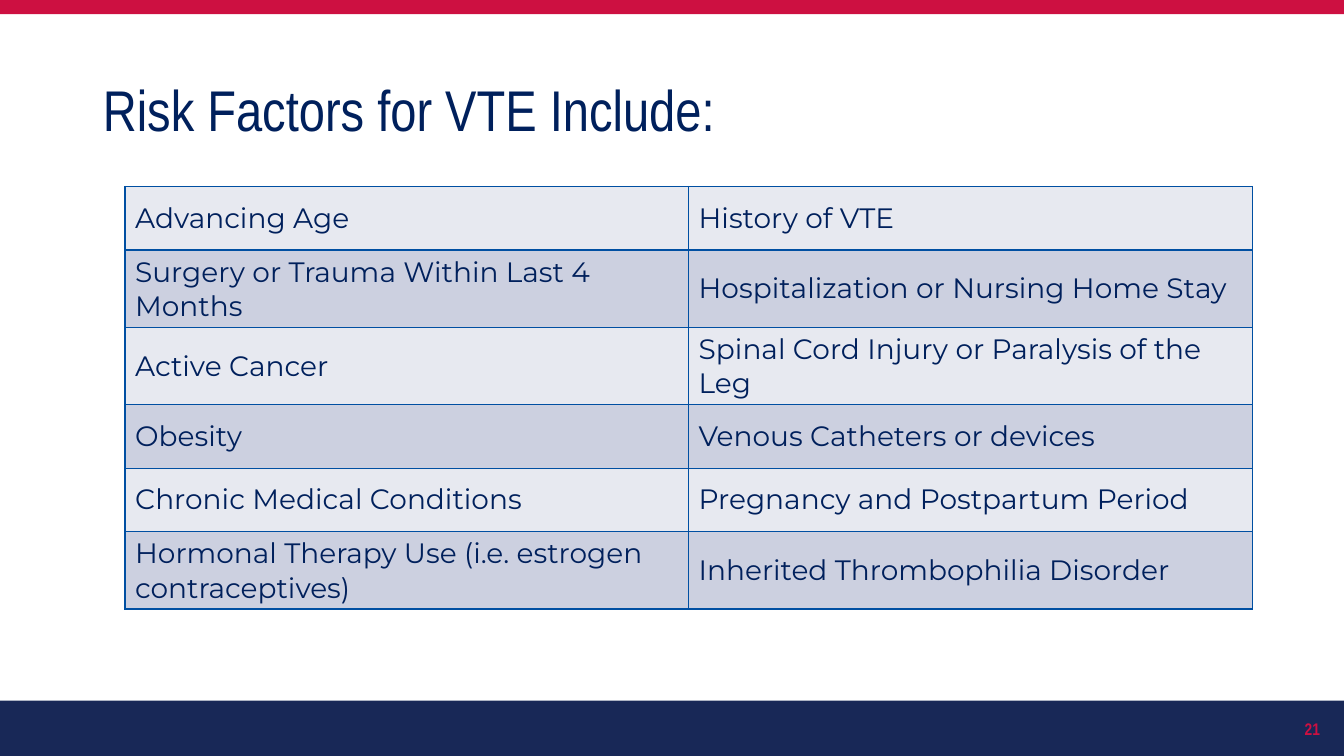
import lxml.etree
import pptx
import pptx.dml.color
import pptx.enum.shapes
import pptx.enum.text
import pptx.oxml.ns
import pptx.util

Inches = pptx.util.Inches
Pt = pptx.util.Pt
RGBColor = pptx.dml.color.RGBColor
ANCHOR = pptx.enum.text.MSO_ANCHOR
ALIGN = pptx.enum.text.PP_ALIGN

TITLE = "Risk Factors for VTE Include:"
SLIDE_NUMBER = "21"
RISK_FACTORS = [
    ("Advancing Age", "History of VTE"),
    ("Surgery or Trauma Within Last 4 Months", "Hospitalization or Nursing Home Stay"),
    ("Active Cancer", "Spinal Cord Injury or Paralysis of the Leg"),
    ("Obesity", "Venous Catheters or devices"),
    ("Chronic Medical Conditions", "Pregnancy and Postpartum Period"),
    ("Hormonal Therapy Use (i.e. estrogen contraceptives)", "Inherited Thrombophilia Disorder"),
]

NAVY = RGBColor(0x18, 0x28, 0x57)
RED = RGBColor(0xCD, 0x10, 0x41)
TEXT_BLUE = RGBColor(0x00, 0x20, 0x5C)
BORDER_BLUE = RGBColor(0x00, 0x4F, 0xA2)
ROW_FILLS = [RGBColor(0xE7, 0xE9, 0xF0), RGBColor(0xCC, 0xD0, 0xE0)]

SLIDE_WIDTH, SLIDE_HEIGHT = 13.33, 7.5
BANDS = [(6.95, 0.55, NAVY), (0, 0.14, RED)]
TABLE_LEFT, TABLE_TOP = 1.24, 1.85
COLUMN_WIDTH, ROW_HEIGHT = 5.59, 0.63


def add_band(slide, top, height, color):
    band = slide.shapes.add_shape(
        pptx.enum.shapes.MSO_SHAPE.RECTANGLE,
        0, Inches(top), Inches(SLIDE_WIDTH), Inches(height))
    band.shadow.inherit = False
    band.fill.solid()
    band.fill.fore_color.rgb = color
    band.line.fill.background()


def format_text(text_frame, font_name, size, color, bold=False, align=ALIGN.LEFT):
    for paragraph in text_frame.paragraphs:
        paragraph.alignment = align
        for run in paragraph.runs:
            run.font.name = font_name
            run.font.size = Pt(size)
            run.font.color.rgb = color
            run.font.bold = bold


def add_borders(cell):
    qn = pptx.oxml.ns.qn
    properties = cell._tc.get_or_add_tcPr()
    for side in ("lnL", "lnR", "lnT", "lnB"):
        line = lxml.etree.SubElement(properties, qn(f"a:{side}"), w=str(Pt(1)))
        fill = lxml.etree.SubElement(line, qn("a:solidFill"))
        lxml.etree.SubElement(fill, qn("a:srgbClr"), val=str(BORDER_BLUE))


def add_risk_table(slide):
    rows, columns = len(RISK_FACTORS), len(RISK_FACTORS[0])
    table = slide.shapes.add_table(
        rows, columns, Inches(TABLE_LEFT), Inches(TABLE_TOP),
        Inches(columns * COLUMN_WIDTH), Inches(rows * ROW_HEIGHT)).table
    table.first_row = False
    table.horz_banding = False
    for row_index, factors in enumerate(RISK_FACTORS):
        for column_index, factor in enumerate(factors):
            cell = table.cell(row_index, column_index)
            cell.text_frame.text = factor
            cell.vertical_anchor = ANCHOR.MIDDLE
            format_text(cell.text_frame, "Montserrat", 20, TEXT_BLUE)
            add_borders(cell)
            cell.fill.solid()
            cell.fill.fore_color.rgb = ROW_FILLS[row_index % 2]


def main():
    presentation = pptx.Presentation()
    presentation.slide_width = Inches(SLIDE_WIDTH)
    presentation.slide_height = Inches(SLIDE_HEIGHT)
    slide = presentation.slides.add_slide(presentation.slide_layouts[5])

    for top, height, color in BANDS:
        add_band(slide, top, height, color)

    title = slide.shapes.title
    title.left, title.top = Inches(0.92), Inches(0.4)
    title.width, title.height = Inches(11.5), Inches(1.45)
    title.text_frame.text = TITLE
    title.text_frame.vertical_anchor = ANCHOR.MIDDLE
    title.text_frame.paragraphs[0].line_spacing = 0.9
    format_text(title.text_frame, "Arial Narrow", 41, TEXT_BLUE)

    number = slide.shapes.add_textbox(Inches(10.19), Inches(7.03), Inches(3), Inches(0.4))
    number.text_frame.word_wrap = True
    number.text_frame.vertical_anchor = ANCHOR.MIDDLE
    number.text_frame.text = SLIDE_NUMBER
    format_text(number.text_frame, "Arial Narrow", 12, RED, bold=True, align=ALIGN.RIGHT)

    add_risk_table(slide)
    presentation.save("out.pptx")


if __name__ == "__main__":
    main()
